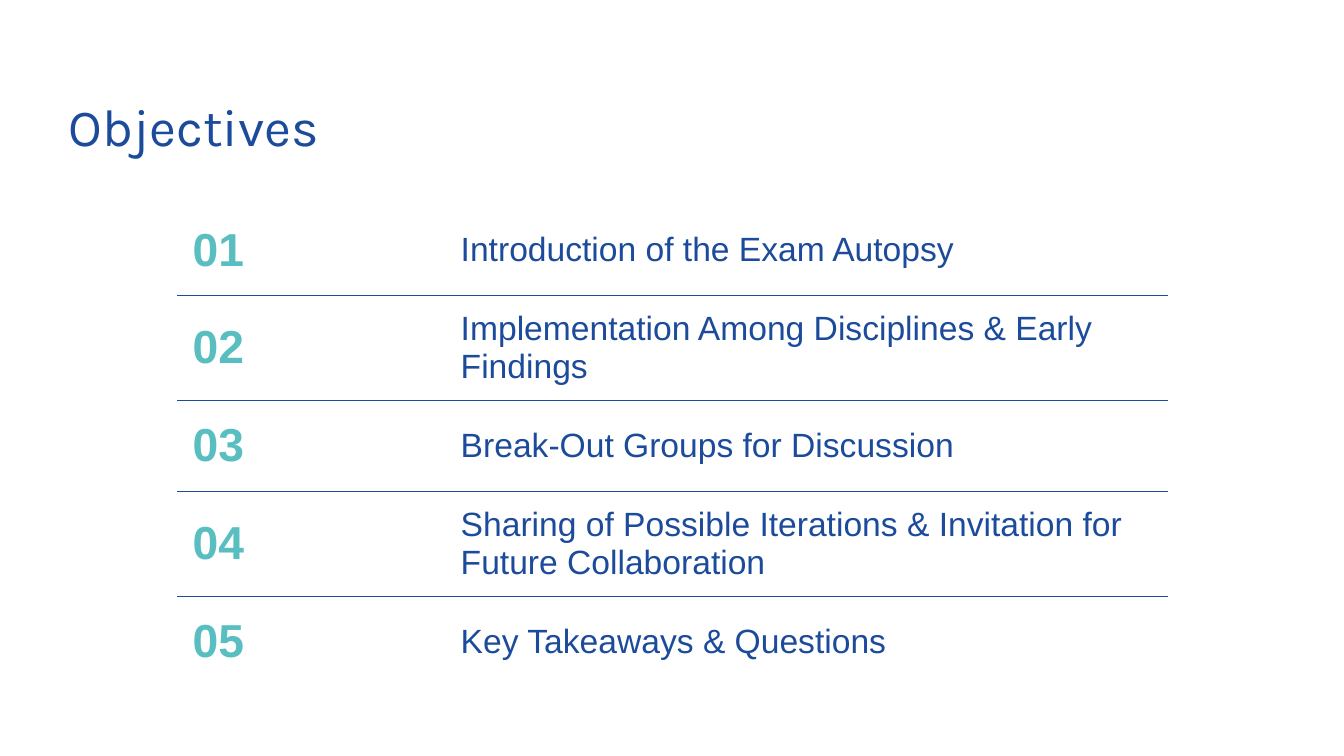
import pptx
import pptx.util
import pptx.dml.color
import pptx.enum.text
import pptx.oxml.ns
import lxml.etree

Inches, Pt = pptx.util.Inches, pptx.util.Pt
ANCHOR = pptx.enum.text.MSO_ANCHOR

TITLE = "Objectives"
OBJECTIVES = [
    "Introduction of the Exam Autopsy",
    "Implementation Among Disciplines & Early Findings",
    "Break-Out Groups for Discussion",
    "Sharing of Possible Iterations & Invitation for Future Collaboration",
    "Key Takeaways & Questions",
]
COLORS = {"blue": "1C4B9B", "teal": "58BEC0"}
COLUMN_WIDTHS = (2.66, 7.16)
ROW_HEIGHT = 0.9
CELL_MARGIN = Inches(0.15)


def style_font(font, name, size, color, bold=False):
    font.name = name
    font.size = Pt(size)
    font.bold = bold
    font.color.rgb = pptx.dml.color.RGBColor.from_string(COLORS[color])


def set_borders(cell, visible):
    """Rule the sides named in visible and clear the other sides."""
    qn = pptx.oxml.ns.qn
    tcPr = cell._tc.get_or_add_tcPr()
    for side in ("L", "R", "T", "B"):
        ln = lxml.etree.SubElement(tcPr, qn(f"a:ln{side}"), w=str(Pt(0.5)))
        if side in visible:
            fill = lxml.etree.SubElement(ln, qn("a:solidFill"))
            lxml.etree.SubElement(fill, qn("a:srgbClr"), val=COLORS["blue"])
        else:
            lxml.etree.SubElement(ln, qn("a:noFill"))


def fill_cell(cell, text, borders, size, color, bold):
    cell.text = text
    cell.vertical_anchor = ANCHOR.MIDDLE
    cell.margin_left = cell.margin_right = CELL_MARGIN
    cell.margin_top = cell.margin_bottom = CELL_MARGIN
    set_borders(cell, borders)
    cell.fill.background()
    style_font(cell.text_frame.paragraphs[0].font, "Arial", size, color, bold)


def add_title(s):
    title = s.shapes.title
    title.left, title.top = Inches(0.58), Inches(0.84)
    title.width, title.height = Inches(12.18), Inches(0.84)
    tf = title.text_frame
    tf.text = TITLE
    tf.vertical_anchor = ANCHOR.TOP
    tf.margin_left = tf.margin_right = Inches(0.1)
    tf.margin_top = tf.margin_bottom = Inches(0.1)
    p = tf.paragraphs[0]
    p.alignment = pptx.enum.text.PP_ALIGN.LEFT
    style_font(p.font, "Karla", 37.3, "blue")


def add_objectives(s):
    count = len(OBJECTIVES)
    table = s.shapes.add_table(
        count, 2, Inches(1.76), Inches(2.03),
        Inches(sum(COLUMN_WIDTHS)), Inches(ROW_HEIGHT * count)).table
    table.first_row = table.horz_banding = False
    for column, width in zip(table.columns, COLUMN_WIDTHS):
        column.width = Inches(width)
    for i, objective in enumerate(OBJECTIVES):
        table.rows[i].height = Inches(ROW_HEIGHT)
        borders = ("T" if i > 0 else "") + ("B" if i < count - 1 else "")
        fill_cell(table.cell(i, 0), f"{i + 1:02}", borders, 33, "teal", True)
        fill_cell(table.cell(i, 1), objective, borders, 24, "blue", False)


def main():
    prs = pptx.Presentation()
    prs.slide_width, prs.slide_height = Inches(13.33), Inches(7.5)
    s = prs.slides.add_slide(prs.slide_layouts.get_by_name("Title Only"))
    add_title(s)
    add_objectives(s)
    prs.save("out.pptx")


if __name__ == "__main__":
    main()
